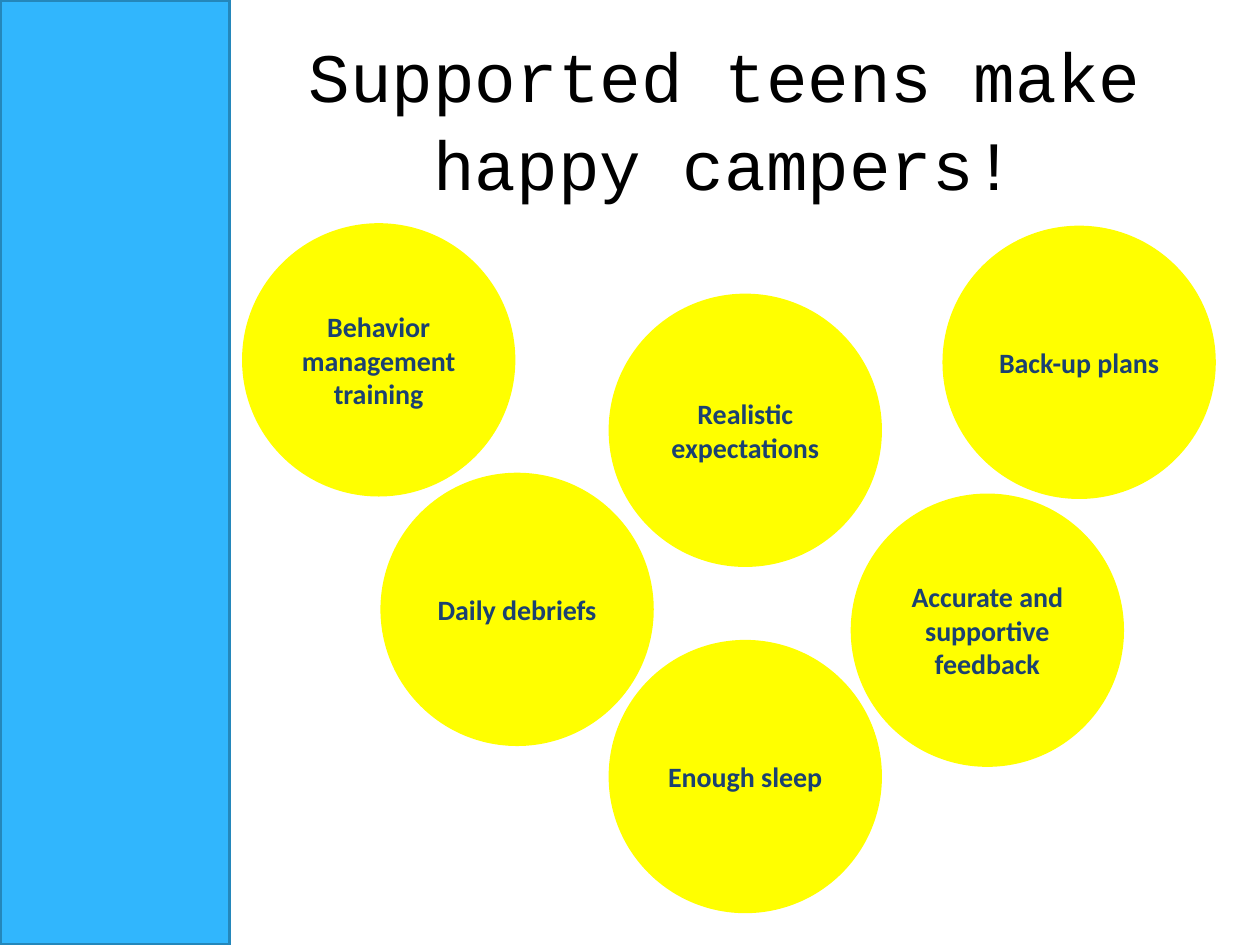
from pptx import Presentation
from pptx.dml.color import RGBColor as Rgb
from pptx.enum.shapes import MSO_SHAPE as Kind
from pptx.enum.text import MSO_ANCHOR as Anchor, MSO_AUTO_SIZE as Fit, PP_ALIGN as Align
from pptx.util import Cm, Pt

TITLE = "Supported teens make happy campers!"
NEEDS = [
    ("Behavior management training", 4.88, 4.5),
    ("Daily debriefs", 7.67, 9.53),
    ("Back-up plans", 19, 4.55),
    ("Realistic expectations", 12.27, 5.92),
    ("Accurate and supportive feedback", 17.15, 9.95),
    ("Enough sleep", 12.27, 12.9),
]
SIZE = 5.51
COLORS = {"bar": "31B6FD", "edge": "2487BB", "disc": "FFFF00", "text": "1B4171", "title": "000000"}


def tint(name):
    return Rgb.from_string(COLORS[name])


def write(shape, text, font, size, color, bold=False):
    frame = shape.text_frame
    frame.text = text
    frame.word_wrap = True
    frame.auto_size = Fit.NONE
    frame.vertical_anchor = Anchor.MIDDLE
    para = frame.paragraphs[0]
    para.alignment = Align.CENTER
    face = para.runs[0].font
    face.name, face.size, face.bold = font, Pt(size), bold
    face.color.rgb = tint(color)
    return para


def draw(slide, kind, box, fill):
    shape = slide.shapes.add_shape(kind, *map(Cm, box))
    shape.shadow.inherit = False
    shape.fill.solid()
    shape.fill.fore_color.rgb = tint(fill)
    return shape


def main():
    deck = Presentation()
    deck.slide_width, deck.slide_height = Cm(25.4), Cm(19.05)
    slide = deck.slides.add_slide(deck.slide_layouts[5])

    bar = draw(slide, Kind.RECTANGLE, (0, 0, 4.63, 19.05), "bar")
    bar.line.color.rgb = tint("edge")
    bar.line.width = Pt(2)

    title = slide.shapes.title
    title.left, title.top, title.width, title.height = map(Cm, (5.08, 0.76, 19.05, 3.18))
    para = write(title, TITLE, "Courier New", 39.6, "title")
    para.line_spacing = 1.06

    for text, left, top in NEEDS:
        disc = draw(slide, Kind.OVAL, (left, top, SIZE, SIZE), "disc")
        disc.line.fill.background()
        write(disc, text, "Calibri", 16, "text", True)

    deck.save("out.pptx")


if __name__ == "__main__":
    main()
